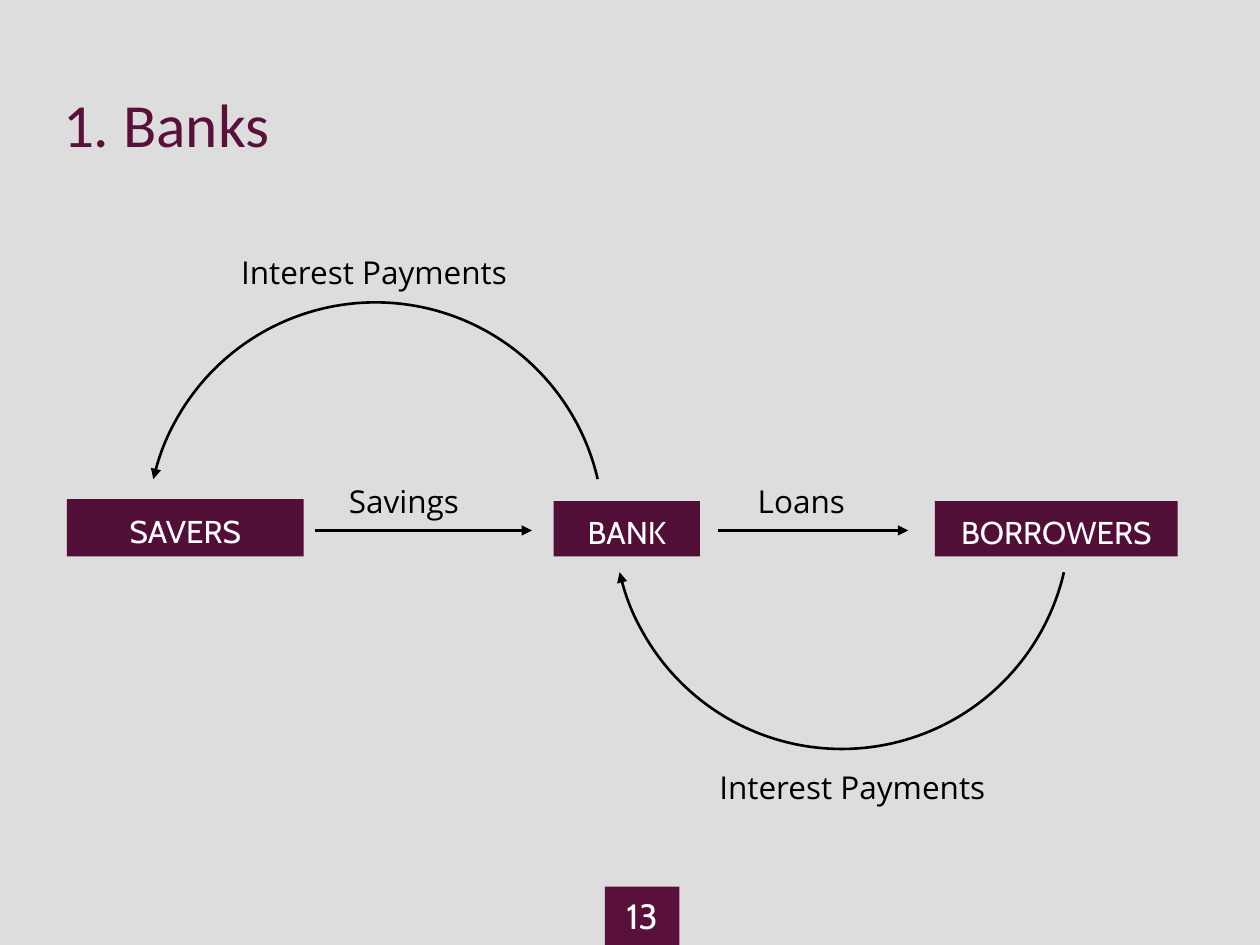
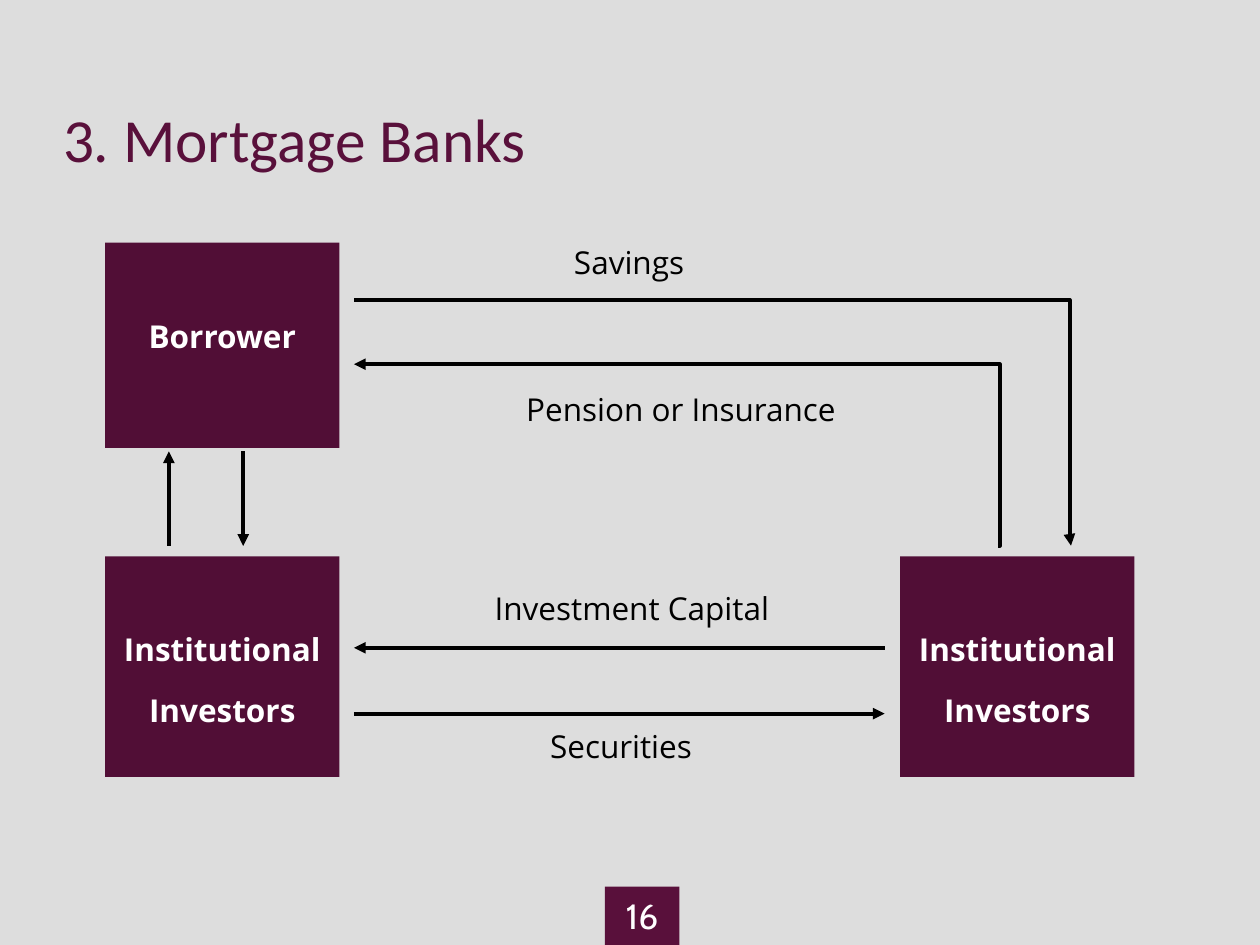
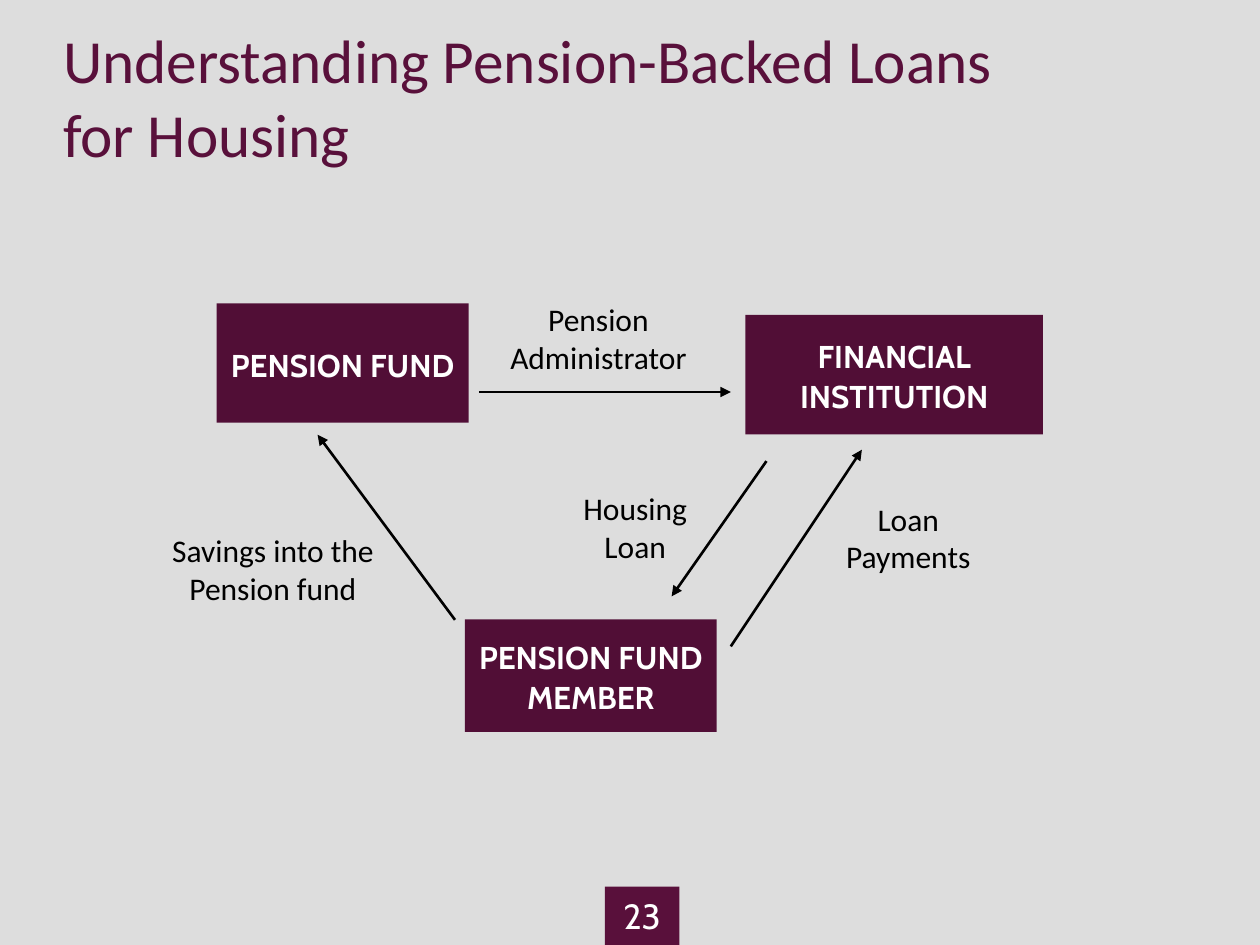
"""Builds three slides on how savings and loans flow between institutions."""
import dataclasses

import pptx
import pptx.dml.color
import pptx.enum.shapes
import pptx.enum.text
import pptx.oxml.ns
import pptx.util
from lxml import etree

Pt = pptx.util.Pt
ANCHOR = pptx.enum.text.MSO_ANCHOR
ALIGN = pptx.enum.text.PP_ALIGN
SHAPE = pptx.enum.shapes.MSO_SHAPE
CONNECTOR = pptx.enum.shapes.MSO_CONNECTOR
RGB = pptx.dml.color.RGBColor.from_string
qn = pptx.oxml.ns.qn


@dataclasses.dataclass(frozen=True)
class Style:
    """Type settings for one kind of text."""
    font: str
    size: float
    color: str
    bold: bool = False
    spacing: float = 1.0
    after: float = 0
    align: ALIGN = ALIGN.CENTER


@dataclasses.dataclass(frozen=True)
class Theme:
    """Colours and type sizes of the deck."""
    background: str = "DDDDDD"
    plum: str = "59103B"
    dark_plum: str = "510E36"
    ink: str = "000000"
    thin: float = 1.5
    thick: float = 2.25
    title: Style = Style("Calibri", 35, "59103B", align=ALIGN.LEFT)
    number: Style = Style("Cabin", 20, "FFFFFF")
    bank_box: Style = Style("Cabin", 18, "FFFFFF", spacing=1.15, after=10)
    mortgage_box: Style = Style("Open Sans", 18, "FFFFFF", True, 1.15, 10)
    pension_box: Style = Style("Cabin", 18, "FFFFFF", True, 1.07, 8)
    flow_label: Style = Style("Open Sans", 18, "000000", spacing=1.15, after=10)
    pension_label: Style = Style("Calibri", 18, "000000")


theme = Theme()


def write(shape, text, style, anchor, margins=(7.2, 3.6, 7.2, 3.6)):
    """Fills a shape with one paragraph for each line of text."""
    frame = shape.text_frame
    frame.word_wrap = True
    frame.auto_size = pptx.enum.text.MSO_AUTO_SIZE.NONE
    frame.vertical_anchor = anchor
    frame.margin_left, frame.margin_top, frame.margin_right, frame.margin_bottom = map(Pt, margins)
    for index, line in enumerate(text.split("\n")):
        para = frame.add_paragraph() if index else frame.paragraphs[0]
        para.alignment = style.align
        para.line_spacing = style.spacing
        para.space_after = Pt(style.after)
        span = para.add_run()
        span.text = line
        span.font.name = style.font
        span.font.size = Pt(style.size)
        span.font.bold = style.bold
        span.font.color.rgb = RGB(style.color)


def draw_arrow(shape, width, end="tailEnd"):
    """Gives a line its colour, width and arrowhead, without a shadow."""
    shape.line.color.rgb = RGB(theme.ink)
    shape.line.width = Pt(width)
    properties = shape.element.spPr
    etree.SubElement(properties.find(qn("a:ln")), qn(f"a:{end}"), type="triangle")
    etree.SubElement(properties, qn("a:effectLst"))


deck = pptx.Presentation()
deck.slide_width, deck.slide_height = Pt(720), Pt(540)
master_fill = deck.slide_master.background.fill
master_fill.solid()
master_fill.fore_color.rgb = RGB(theme.background)

pages = []
for title, number, (top, width, height) in [
    ("1. Banks", "13", (12, 648, 79.5)),
    ("3. Mortgage Banks", "16", (54, 648, 46)),
    ("Understanding Pension-Backed Loans for Housing", "23", (12, 570, 85)),
]:
    page = deck.slides.add_slide(deck.slide_layouts[5])
    heading = page.shapes.title
    heading.left, heading.top, heading.width, heading.height = map(Pt, (36, top, width, height))
    write(heading, title, theme.title, ANCHOR.BOTTOM, (0, 0, 0, 0))
    pages.append(page)

    badge = page.shapes.add_shape(SHAPE.RECTANGLE, Pt(345.6), Pt(506.6), Pt(42.6), Pt(33.4))
    badge.shadow.inherit = False
    badge.fill.solid()
    badge.fill.fore_color.rgb = RGB(theme.plum)
    badge.line.fill.background()
    write(badge, number, theme.number, ANCHOR.MIDDLE)

banks, mortgages, pensions = pages
middle = (ANCHOR.MIDDLE, (7.2, 3.6, 7.2, 3.6))
lowered = (ANCHOR.TOP, (7.2, 39, 7.2, 3.6))

for page, style, placing, boxes in [
    (banks, theme.bank_box, middle, [
        ("BANK", 316.4, 286.4, 83.6, 31.6),
        ("SAVERS", 38.2, 285.2, 135.3, 32.8),
        ("BORROWERS", 534.3, 286.4, 138.6, 31.6),
    ]),
    (mortgages, theme.mortgage_box, lowered, [
        ("Borrower", 60, 138.7, 134, 117.3),
        ("Institutional\nInvestors", 60, 318, 134, 126),
        ("Institutional\nInvestors", 514.3, 318, 134, 126),
    ]),
    (pensions, theme.pension_box, middle, [
        ("PENSION FUND", 123.8, 173.4, 144, 68.2),
        ("PENSION FUND MEMBER", 265.6, 354, 144, 64.2),
        ("FINANCIAL INSTITUTION", 426, 180, 170, 68.2),
    ]),
]:
    for text, *place in boxes:
        box = page.shapes.add_shape(SHAPE.RECTANGLE, *map(Pt, place))
        box.shadow.inherit = False
        box.fill.solid()
        box.fill.fore_color.rgb = RGB(theme.dark_plum)
        box.line.fill.background()
        write(box, text, style, *placing)

for page, style, margins, labels in [
    (banks, theme.flow_label, (7.2, 3.6, 7.2, 3.6), [
        ("Interest Payments", 382.3, 432, 209.5, 30),
        ("Interest Payments", 100, 138, 227.5, 30),
        ("Savings", 182.6, 268.8, 96.5, 30),
        ("Loans", 409.7, 268.8, 96.5, 30),
    ]),
    (mortgages, theme.flow_label, (7.2, 3.6, 7.2, 3.6), [
        ("Savings", 282, 132, 155, 35),
        ("Pension or Insurance", 280.8, 216, 216.7, 35),
        ("Investment Capital", 224.6, 329.8, 273, 35),
        ("Securities", 235.4, 408.4, 239, 35),
    ]),
    (pensions, theme.pension_label, (3.6, 3.6, 3.6, 3.6), [
        ("Pension\nAdministrator", 270, 168, 144, 51),
        ("Housing Loan", 312, 276, 102, 51),
        ("Loan Payments", 474, 282, 90, 51),
        ("Savings into the\nPension fund", 84, 300, 144, 51),
    ]),
]:
    for text, *place in labels:
        label = page.shapes.add_textbox(*map(Pt, place))
        write(label, text, style, ANCHOR.TOP, margins)

for page, width, arrows in [
    (banks, theme.thin, [
        (180, 303.1, 304, 303.1),
        (410.4, 303.1, 519, 303.1),
    ]),
    (mortgages, theme.thick, [
        (202.3, 407.8, 505.5, 407.8),
        (505.5, 370.2, 202.3, 370.2),
        (96.5, 312, 96.5, 258),
        (139, 258, 139, 312),
    ]),
    (pensions, theme.thin, [
        (273.6, 224, 417.6, 224),
        (438, 263.5, 383.8, 340.8),
        (417.6, 369.4, 492.5, 257),
        (260, 354.2, 181.5, 248.4),
    ]),
]:
    for ends in arrows:
        arrow = page.shapes.add_connector(CONNECTOR.STRAIGHT, *map(Pt, ends))
        draw_arrow(arrow, width)

radius = 130.3
for center_x, center_y, start, stop, end in [
    (214.6, 303.1, 193, 347, "headEnd"),
    (481, 297.7, 13, 167, "tailEnd"),
]:
    interest_arc = banks.shapes.add_shape(
        SHAPE.ARC, Pt(center_x - radius), Pt(center_y - radius), Pt(2 * radius), Pt(2 * radius))
    interest_arc.adjustments[0] = start * 0.6
    interest_arc.adjustments[1] = stop * 0.6
    interest_arc.fill.background()
    draw_arrow(interest_arc, theme.thin, end)

for ends, bend, rotation in [
    ((202.3, 171.4, 612, 311.8), 99800, 0),
    ((202.3, 208.1, 570.2, 311.8), -300, 180),
]:
    elbow = mortgages.shapes.add_connector(CONNECTOR.ELBOW, *map(Pt, ends))
    elbow.element.spPr.find(qn("a:xfrm")).set("rot", str(rotation * 60000))
    guides = elbow.element.spPr.find(qn("a:prstGeom")).find(qn("a:avLst"))
    etree.SubElement(guides, qn("a:gd"), name="adj1", fmla=f"val {bend}")
    draw_arrow(elbow, theme.thick)

deck.save("out.pptx")
